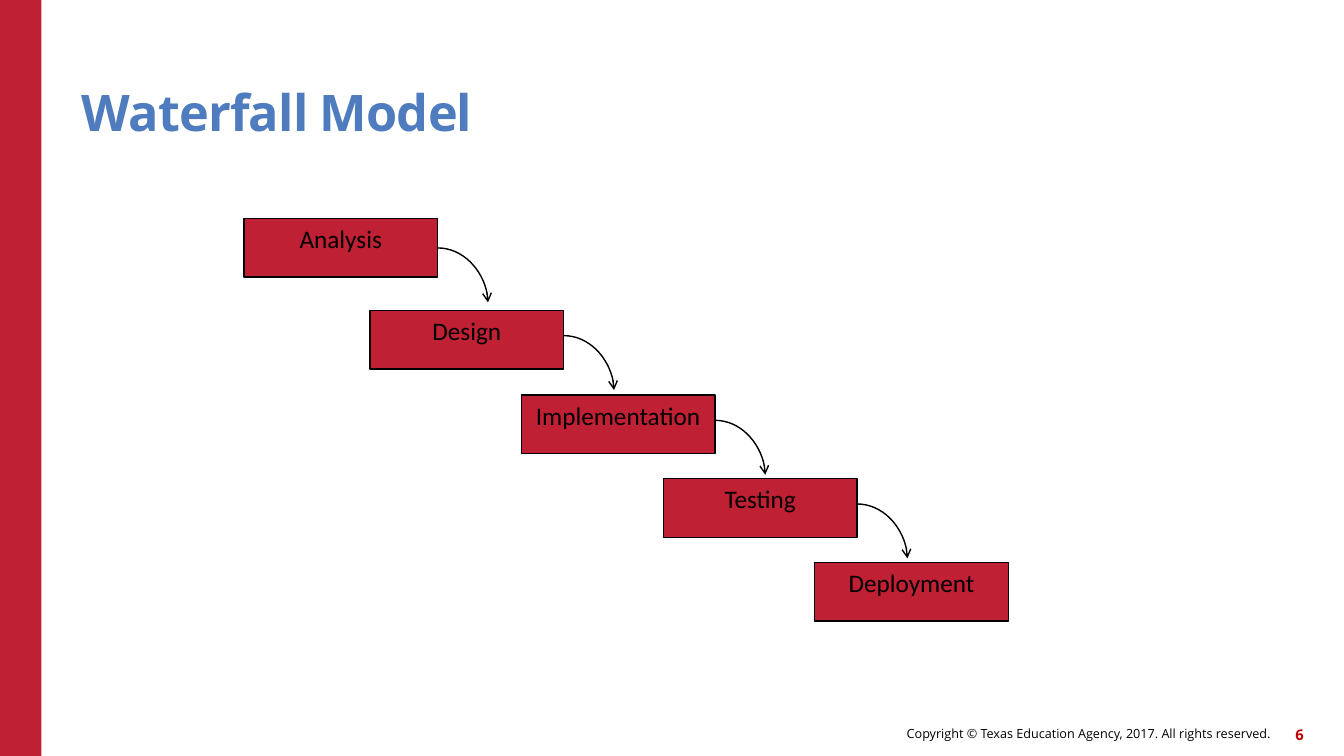
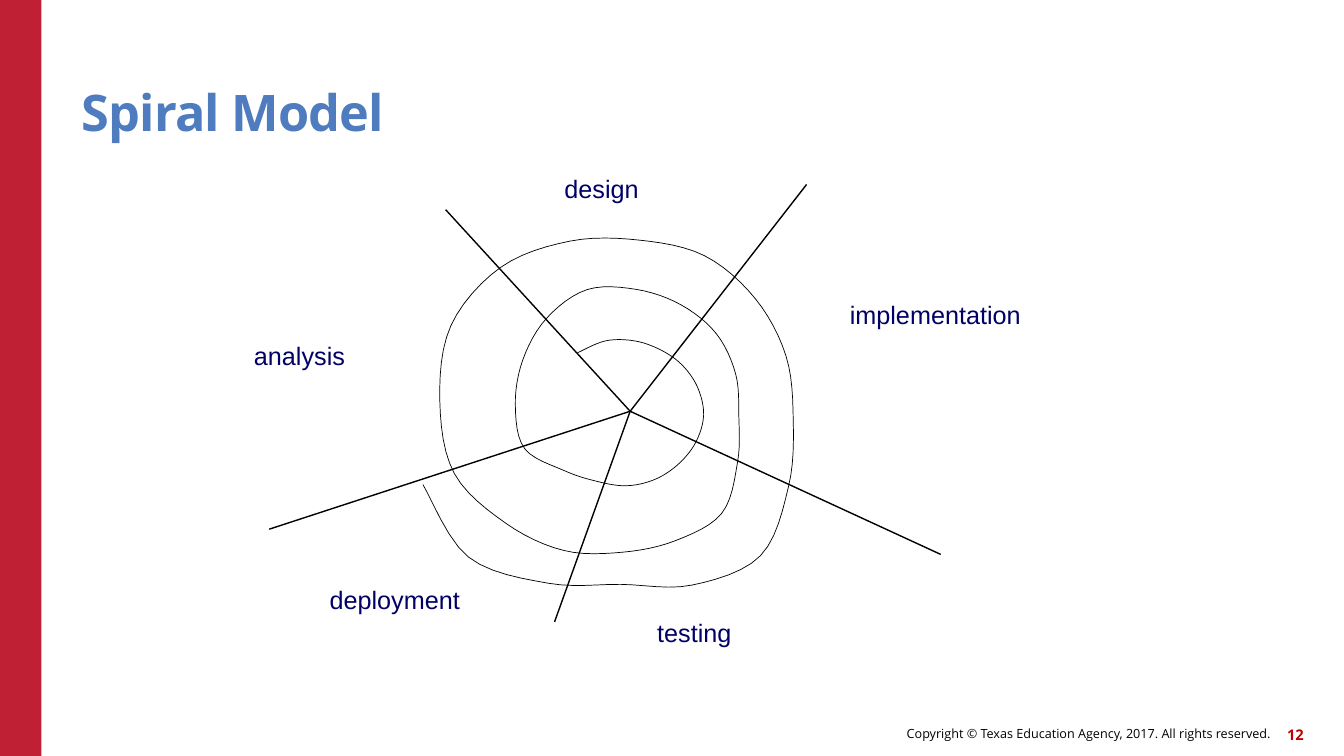
from math import cos, radians, sin

from lxml import etree
from pptx import Presentation
from pptx.dml.color import RGBColor
from pptx.enum.shapes import MSO_CONNECTOR as Connector, MSO_SHAPE as Shape
from pptx.enum.text import MSO_ANCHOR as Anchor, MSO_AUTO_SIZE as AutoSize, PP_ALIGN as Align
from pptx.oxml.ns import qn
from pptx.util import Inches, Pt

COLORS = {"red": "C02033", "number": "C00000", "title": "4E7CBE",
          "label": "000066", "black": "000000"}
FORMATS = {
    "title": {"name": "Open Sans", "size": Pt(36), "bold": True, "color": "title"},
    "copyright": {"name": "Open Sans", "size": Pt(9), "color": "black"},
    "number": {"name": "Open Sans", "size": Pt(10.5), "bold": True, "color": "number"},
    "stage": {"name": "Calibri", "size": Pt(18), "color": "black"},
    "sector": {"name": "Arial", "size": Pt(18), "color": "label"},
}
COPYRIGHT = "Copyright © Texas Education Agency, 2017. All rights reserved."

# Stage name, left and top inside the waterfall region
STAGES = [("Analysis", 0, 0), ("Design", 1.25, 0.91), ("Implementation", 2.75, 1.75),
          ("Testing", 4.16, 2.58), ("Deployment", 5.66, 3.41)]
STAGE_SIZE = (1.92, 0.58)
ARROW_SIZE = (0.5, 0.54)

# Positions inside the spiral region, measured from the hub
SPOKE_ENDS = [(-1.83, -2), (1.75, -2.25), (3.08, 1.42), (-0.75, 2.09), (-3.58, 1.17)]
SECTORS = [("design", -0.75, -2.41, 0.94), ("implementation", 2.08, -1.16, 1.91),
           ("testing", 0.17, 2, 0.94), ("deployment", -3.08, 1.67, 1.51),
           ("analysis", -3.83, -0.75, 1.11)]
# Distance of the hand-drawn spiral from the hub, one row a turn, clockwise
SPIRAL_RADII = [
    0.78, 0.74, 0.7, 0.68, 0.69, 0.71, 0.73, 0.72, 0.71, 0.72, 0.74, 0.77, 0.88, 1.11, 1.14, 1.18,
    1.24, 1.28, 1.21, 1.17, 1.15, 1.11, 1.08, 1.18, 1.36, 1.36, 1.4, 1.53, 1.66, 1.85, 1.89, 1.97,
    1.92, 1.79, 1.7, 1.71, 1.67, 1.64, 1.62, 1.74, 1.93, 1.83, 1.72, 1.89, 2.16, 2.18,
]
SPIRAL_START = -132
SPIRAL_STEP = 22.5
CURVE_STEPS = 6


def color(key):
    return RGBColor.from_string(COLORS[key])


def set_font(font, style):
    for name, value in FORMATS[style].items():
        if name == "color":
            font.color.rgb = color(value)
        else:
            setattr(font, name, value)


def set_frame(frame, **values):
    for name, value in values.items():
        setattr(frame, name, value)


def remove_margins(frame):
    set_frame(frame, margin_left=0, margin_top=0, margin_right=0, margin_bottom=0)


def write(frame, text, style, align):
    paragraph = frame.paragraphs[0]
    paragraph.alignment = align
    run = paragraph.add_run()
    run.text = text
    set_font(run.font, style)
    return run


def add_text(slide, box, text, style, align=Align.LEFT):
    frame = slide.shapes.add_textbox(*map(Inches, box)).text_frame
    write(frame, text, style, align)
    return frame


def add_rectangle(slide, box, fill):
    shape = slide.shapes.add_shape(Shape.RECTANGLE, *map(Inches, box))
    shape.shadow.inherit = False
    shape.fill.solid()
    shape.fill.fore_color.rgb = color(fill)
    shape.line.fill.background()
    return shape


def set_line(shape, width):
    shape.line.color.rgb = color("black")
    shape.line.width = Pt(width)


def add_line(slide, start, end, kind=Connector.STRAIGHT):
    connector = slide.shapes.add_connector(kind, *map(Inches, (*start, *end)))
    set_line(connector, 1)
    etree.SubElement(connector._element.spPr, qn("a:effectLst"))
    return connector


def add_curved_arrow(slide, start, end):
    """Leave the start sideways and point down at the end."""
    connector = add_line(slide, start, end, Connector.CURVE)
    connector._element.spPr.find(qn("a:prstGeom")).set("prst", "curvedConnector2")
    line = connector._element.spPr.find(qn("a:ln"))
    etree.SubElement(line, qn("a:tailEnd"), type="arrow")


def add_title(slide, text):
    title = slide.shapes.title
    title.left, title.top, title.width, title.height = map(Inches, (0.81, 0.45, 11, 0.96))
    frame = title.text_frame
    remove_margins(frame)
    set_frame(frame, vertical_anchor=Anchor.BOTTOM, word_wrap=True)
    run = write(frame, text, "title", Align.LEFT)
    run.font._element.set("spc", "-60")
    frame.paragraphs[0].line_spacing = 0.9


def add_footer(slide, number):
    parts = [((6.14, 7.12, 6.46, 0.32), COPYRIGHT, "copyright"),
             ((12.51, 7.13, 0.42, 0.32), str(number), "number")]
    for box, text, style in parts:
        frame = add_text(slide, box, text, style, Align.RIGHT)
        remove_margins(frame)
        set_frame(frame, word_wrap=True, vertical_anchor=Anchor.MIDDLE)


def add_base_slide(presentation, title, number):
    slide = presentation.slides.add_slide(presentation.slide_layouts[5])
    add_rectangle(slide, (0, 0, 0.41, 7.5), "red")
    add_footer(slide, number)
    add_title(slide, title)
    return slide


def add_waterfall(slide, left, top):
    width, height = STAGE_SIZE
    for name, x, y in STAGES:
        box = add_rectangle(slide, (left + x, top + y, width, height), "red")
        set_line(box, 1)
        set_frame(box.text_frame, vertical_anchor=Anchor.TOP, word_wrap=True)
        write(box.text_frame, name, "stage", Align.CENTER)
    for index, (_, x, y) in enumerate(STAGES[:-1]):
        drop = height / 2 if index == 0 else 0.25
        start = (left + x + width, top + y + drop)
        end = (start[0] + ARROW_SIZE[0], start[1] + ARROW_SIZE[1])
        add_curved_arrow(slide, start, end)


def smooth(points):
    """Return a dense Catmull-Rom curve through the points."""
    padded = [points[0], *points, points[-1]]
    curve = []
    for quad in zip(padded, padded[1:], padded[2:], padded[3:]):
        for step in range(CURVE_STEPS):
            t = step / CURVE_STEPS
            curve.append(tuple(
                b + t / 2 * (c - a + t * (2 * a - 5 * b + 4 * c - d
                                          + t * (3 * (b - c) + d - a)))
                for a, b, c, d in zip(*quad)))
    return [*curve, points[-1]]


def add_spiral_curve(slide, hub_x, hub_y):
    knots = []
    for index, radius in enumerate(SPIRAL_RADII):
        angle = radians(SPIRAL_START + index * SPIRAL_STEP)
        knots.append((hub_x + radius * cos(angle), hub_y + radius * sin(angle)))
    points = [(Inches(x), Inches(y)) for x, y in smooth(knots)]
    builder = slide.shapes.build_freeform(*points[0])
    builder.add_line_segments(points[1:], close=False)
    spiral = builder.convert_to_shape()
    spiral.shadow.inherit = False
    spiral.fill.background()
    set_line(spiral, 0.5)


def add_spiral(slide, hub_x, hub_y):
    for x, y in SPOKE_ENDS:
        add_line(slide, (hub_x + x, hub_y + y), (hub_x, hub_y))
    for name, x, y, width in SECTORS:
        frame = add_text(slide, (hub_x + x, hub_y + y, width, 0.4), name, "sector")
        set_frame(frame, word_wrap=False, auto_size=AutoSize.SHAPE_TO_FIT_TEXT)
    add_spiral_curve(slide, hub_x, hub_y)


def main():
    presentation = Presentation()
    presentation.slide_width = Inches(13.33)
    presentation.slide_height = Inches(7.5)
    add_waterfall(add_base_slide(presentation, "Waterfall Model", 6), 2.42, 2.17)
    add_spiral(add_base_slide(presentation, "Spiral Model", 12), 6.25, 4.08)
    presentation.save("out.pptx")


if __name__ == "__main__":
    main()
